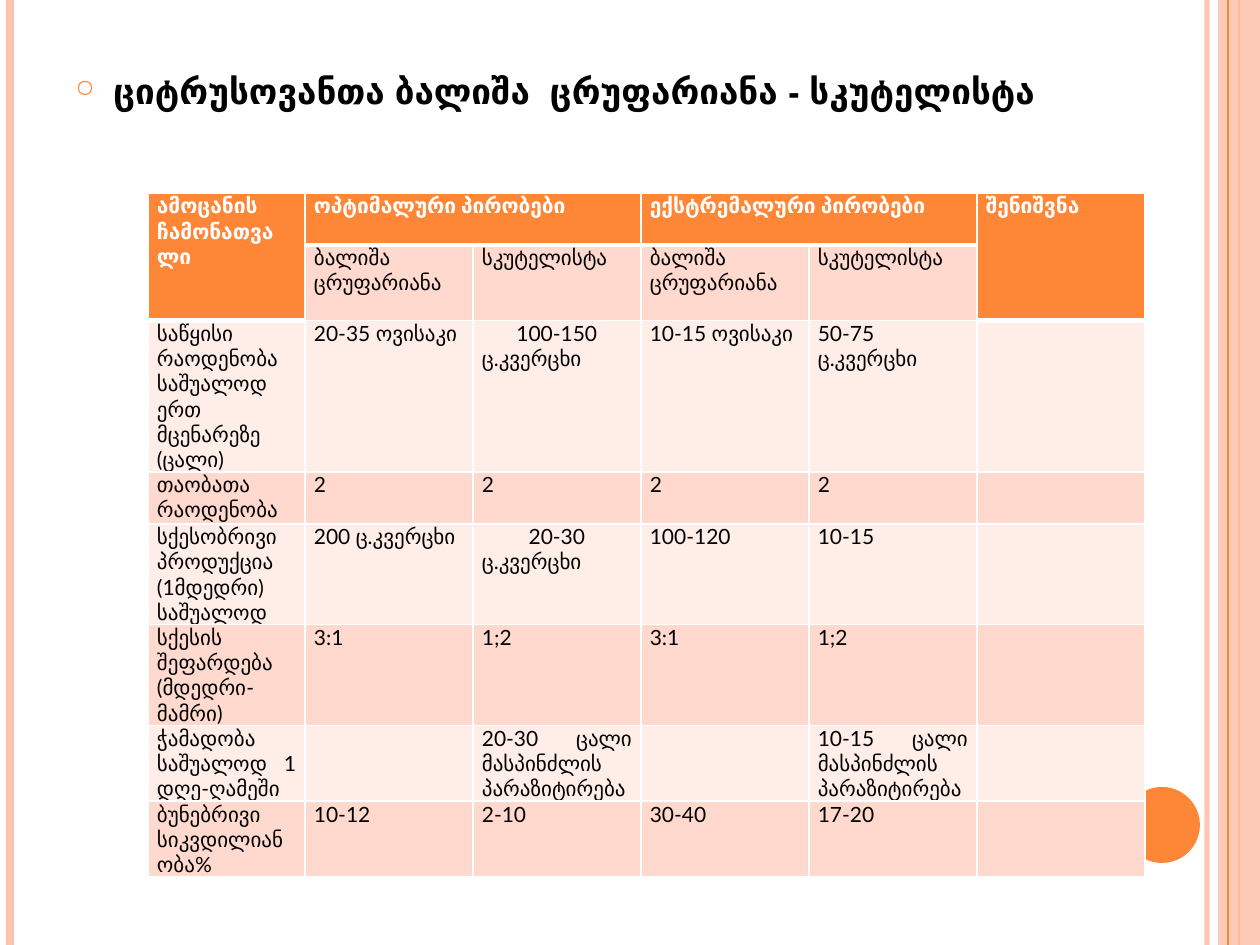
from lxml import etree
from pptx import Presentation
from pptx.dml.color import RGBColor
from pptx.enum.shapes import MSO_CONNECTOR, MSO_SHAPE
from pptx.enum.text import PP_ALIGN
from pptx.oxml.ns import qn
from pptx.util import Pt

STRAIGHT = MSO_CONNECTOR.STRAIGHT
RECT, OVAL = MSO_SHAPE.RECTANGLE, MSO_SHAPE.OVAL
LEFT, JUSTIFY = PP_ALIGN.LEFT, PP_ALIGN.JUSTIFY

ORANGE = RGBColor(0xFE, 0x86, 0x37)
PEACH = RGBColor(0xFE, 0xC3, 0xAE)
BAND_DARK = RGBColor(0xFF, 0xD9, 0xCE)
BAND_LIGHT = RGBColor(0xFF, 0xED, 0xE8)
WHITE = RGBColor(0xFF, 0xFF, 0xFF)
BLACK = RGBColor(0, 0, 0)

SCALE = 914400 / 126
W, H = 1260, 945

TITLE = "ციტრუსოვანთა ბალიშა  ცრუფარიანა - სკუტელისტა"
PEST, PARASITE = "ბალიშა  ცრუფარიანა ", "სკუტელისტა"
ROWS = [
    ["ამოცანის ჩამონათვალი", "ოპტიმალური პირობები", "", "ექსტრემალური პირობები", "", "შენიშვნა"],
    ["", PEST, PARASITE, PEST, PARASITE, ""],
    ["საწყისი რაოდენობა საშუალოდ ერთ მცენარეზე (ცალი)", "20-35 ოვისაკი",
     " 100-150  ც.კვერცხი", "10-15 ოვისაკი", "50-75 ც.კვერცხი", ""],
    ["თაობათა რაოდენობა", "2", "2", "2", "2", ""],
    ["სქესობრივი პროდუქცია (1მდედრი) საშუალოდ ", "200 ც.კვერცხი",
     " 20-30  ც.კვერცხი", "100-120", "10-15", ""],
    ["სქესის შეფარდება (მდედრი-მამრი)", "3:1", "1;2", "3:1", "1;2", ""],
    ["ჭამადობა საშუალოდ 1 დღე-ღამეში", "", "20-30 ცალი მასპინძლის პარაზიტირება",
     "", "10-15 ცალი მასპინძლის პარაზიტირება", ""],
    ["ბუნებრივი სიკვდილიანობა%", "10-12", "2-10", "30-40", "17-20", ""],
]
MERGES = [(0, 0, 1, 0), (0, 1, 0, 2), (0, 3, 0, 4), (0, 5, 1, 5)]


def px(n):
    return round(n * SCALE)


def write(tf, text, *, font, size, color, bold=False, align=LEFT):
    p = tf.paragraphs[0]
    p.alignment = align
    r = p.add_run()
    r.text = text
    r.font.name, r.font.size, r.font.bold = font, Pt(size), bold
    r.font.color.rgb = color
    return p


def set_alpha(fill, percent):
    clr = fill._xPr.find(".//" + qn("a:srgbClr"))
    etree.SubElement(clr, qn("a:alpha"), val=str(percent * 1000))


def add_rule(s, x, y, h, color, width, alpha=100):
    ln = s.shapes.add_connector(STRAIGHT, px(x), px(y), px(x), px(y + h))
    ln.line.color.rgb = color
    ln.line.width = Pt(width)
    if alpha < 100:
        set_alpha(ln.line.fill, alpha)
    etree.SubElement(ln._element.spPr, qn("a:effectLst"))


def add_block(s, kind, x, y, w, h, color, alpha=100):
    sp = s.shapes.add_shape(kind, px(x), px(y), px(w), px(h))
    sp.shadow.inherit = False
    sp.fill.solid()
    sp.fill.fore_color.rgb = color
    sp.line.fill.background()
    if alpha < 100:
        set_alpha(sp.fill, alpha)


def add_frame(s, x, y, w, h):
    add_rule(s, x + w - 53, y, h, PEACH, 3, 93)
    add_rule(s, x + 10, y, h, PEACH, 4.5)
    add_rule(s, x + w - 21, y, h, ORANGE, 1.5)
    add_block(s, RECT, x + w - 42, y, 42, h, PEACH, 87)
    add_rule(s, x + w - 32, y, h, ORANGE, 0.75)
    add_block(s, OVAL, x + w - 136, y + h - 158, 76, 76, ORANGE)


def add_heading(s, x, y, w, h):
    tf = s.shapes.add_textbox(px(x), px(y), px(w), px(h)).text_frame
    tf.word_wrap = True
    p = write(tf, TITLE, font="TeX Gyre Schola", size=20, color=BLACK, bold=True)
    p.space_before = Pt(6)
    pPr = p._p.get_or_add_pPr()
    pPr.set("marL", str(px(38)))
    pPr.set("indent", str(px(-38)))
    clr = etree.SubElement(pPr, qn("a:buClr"))
    etree.SubElement(clr, qn("a:srgbClr"), val=str(ORANGE))
    etree.SubElement(pPr, qn("a:buSzPct"), val="70000")
    etree.SubElement(pPr, qn("a:buChar"), char="○")


def set_borders(cell, bottom):
    tcPr = cell._tc.get_or_add_tcPr()
    for side, width in (("L", 1), ("R", 1), ("T", 1), ("B", bottom)):
        ln = etree.SubElement(tcPr, qn("a:ln" + side), w=str(Pt(width)))
        fill = etree.SubElement(ln, qn("a:solidFill"))
        etree.SubElement(fill, qn("a:srgbClr"), val=str(WHITE))


def add_comparison(s, x, y, w, h):
    cols = len(ROWS[0])
    frame = s.shapes.add_table(len(ROWS), cols, px(x), px(y), px(w), px(h))
    tbl = frame.table
    tbl.first_row = tbl.horz_banding = False
    for i, col in enumerate(tbl.columns):
        col.width = px(168 if i else w - 168 * (cols - 1))
    for row in tbl.rows:
        row.height = px(52)
    frame.height = px(h)
    for i, texts in enumerate(ROWS):
        for j, text in enumerate(texts):
            header = i == 0 or (i == 1 and j in (0, cols - 1))
            cell = tbl.cell(i, j)
            cell.margin_left = cell.margin_right = px(9)
            cell.margin_top = cell.margin_bottom = 0
            set_borders(cell, 3 if header else 1)
            cell.fill.solid()
            cell.fill.fore_color.rgb = ORANGE if header else BAND_DARK if i % 2 else BAND_LIGHT
            if text:
                write(cell.text_frame, text, font="Lato", size=12, align=JUSTIFY,
                      color=WHITE if header else BLACK, bold=header)
    for r1, c1, r2, c2 in MERGES:
        tbl.cell(r1, c1).merge(tbl.cell(r2, c2))


def main():
    prs = Presentation()
    prs.slide_width, prs.slide_height = px(W), px(H)
    s = prs.slides.add_slide(prs.slide_layouts[6])
    add_frame(s, 0, 0, W, H)
    add_heading(s, 63, 63, 1029, 829)
    add_comparison(s, 148, 193, 997, 658)
    prs.save("out.pptx")


if __name__ == "__main__":
    main()
